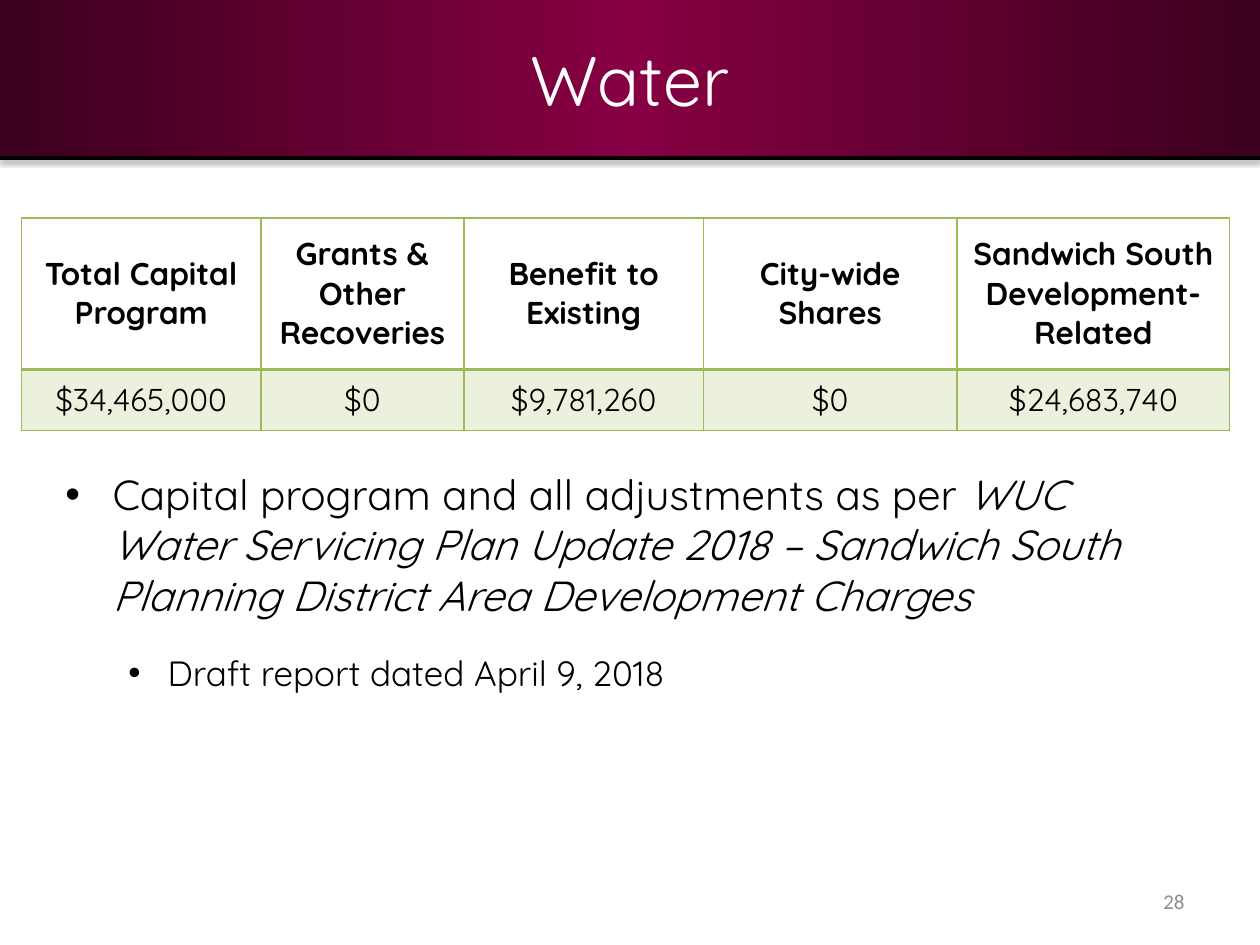
from copy import deepcopy

from lxml.etree import SubElement
from pptx import Presentation
from pptx.dml.color import RGBColor
from pptx.enum.shapes import MSO_CONNECTOR, MSO_SHAPE
from pptx.enum.text import MSO_ANCHOR, PP_ALIGN
from pptx.oxml.ns import qn
from pptx.util import Cm, Pt

PAGE_WIDTH, PAGE_HEIGHT, BAND_HEIGHT = Cm(25.4), Cm(19.05), Cm(3.18)
GREEN = "9BBB59"
BAND_STOPS = [(0, "3C001E"), (0.5, "860043"), (1, "3C001E")]
COLUMN_WIDTHS = [4.83, 4.09, 4.83, 5.11, 5.5]
ROW_HEIGHTS = [3.05, 1.24]
HEADINGS = ["Total Capital Program", "Grants & Other Recoveries", "Benefit to Existing",
            "City-wide Shares", "Sandwich South Development-Related"]
AMOUNTS = ["$34,465,000", "$0", "$9,781,260", "$0", "$24,683,740"]


def colour(value):
    return RGBColor.from_string(value)


def add_span(para, text, shade="000000", **formats):
    span = para.add_run()
    span.text = text
    span.font.color.rgb = colour(shade)
    for name, value in ({"name": "Quicksand"} | formats).items():
        setattr(span.font, name, value)


def add_band(page):
    band = page.shapes.add_shape(MSO_SHAPE.RECTANGLE, 0, 0, PAGE_WIDTH, BAND_HEIGHT)
    band.shadow.inherit = False
    band.line.fill.background()
    band.fill.gradient()
    band.fill.gradient_angle = 0
    stop_list = band._element.spPr.find(".//" + qn("a:gsLst"))
    stop_list.append(deepcopy(stop_list[-1]))
    for stop, (position, shade) in zip(band.fill.gradient_stops, BAND_STOPS):
        stop.position = position
        stop.color.rgb = colour(shade)
    page.shapes._spTree.insert(2, band._element)


def add_rule(page):
    """Draw the black line under the band, with its soft shadow."""
    rule = page.shapes.add_connector(MSO_CONNECTOR.STRAIGHT, 0, BAND_HEIGHT,
                                     PAGE_WIDTH, BAND_HEIGHT)
    rule.line.color.rgb = colour("000000")
    rule.line.width = Pt(2)
    effects = SubElement(rule._element.spPr, qn("a:effectLst"))
    shadow = SubElement(effects, qn("a:outerShdw"), blurRad=str(Pt(3.1)),
                        dist=str(Pt(1.6)), dir="5400000", rotWithShape="0")
    shade = SubElement(shadow, qn("a:srgbClr"), val="000000")
    SubElement(shade, qn("a:alpha"), val="38000")


def set_title(page, text):
    title = page.shapes.title
    place = {"left": 0, "top": 0, "width": PAGE_WIDTH, "height": BAND_HEIGHT}
    for name, value in place.items():
        setattr(title, name, value)
    title.text_frame.vertical_anchor = MSO_ANCHOR.MIDDLE
    para = title.text_frame.paragraphs[0]
    para.alignment = PP_ALIGN.CENTER
    add_span(para, text, "FFFFFF", size=Pt(40))


def set_borders(cell, bottom_width):
    properties = cell._tc.get_or_add_tcPr()
    for side, width in {"L": 1, "R": 1, "T": 1, "B": bottom_width}.items():
        border = SubElement(properties, qn("a:ln" + side), w=str(Pt(width)))
        fill = SubElement(border, qn("a:solidFill"))
        SubElement(fill, qn("a:srgbClr"), val=GREEN)


def fill_cell(cell, text, is_heading):
    cell.vertical_anchor = MSO_ANCHOR.MIDDLE
    set_borders(cell, 2 if is_heading else 1)
    if is_heading:
        cell.fill.background()
    else:
        cell.fill.solid()
        cell.fill.fore_color.rgb = colour(GREEN)
        shade = cell._tc.tcPr.find(qn("a:solidFill") + "/" + qn("a:srgbClr"))
        SubElement(shade, qn("a:alpha"), val="20000")
        for side in ("left", "right", "top", "bottom"):
            setattr(cell, "margin_" + side, 0)
    para = cell.text_frame.paragraphs[0]
    para.alignment = PP_ALIGN.CENTER
    add_span(para, text, size=Pt(18), bold=is_heading)


def add_cost_table(page):
    rows = [HEADINGS, AMOUNTS]
    table = page.shapes.add_table(len(rows), len(HEADINGS), Cm(0.43), Cm(4.39),
                                  Cm(sum(COLUMN_WIDTHS)), Cm(sum(ROW_HEIGHTS))).table
    table.first_row = table.horz_banding = False
    for column, width in zip(table.columns, COLUMN_WIDTHS):
        column.width = Cm(width)
    for row_index, (height, texts) in enumerate(zip(ROW_HEIGHTS, rows)):
        table.rows[row_index].height = Cm(height)
        for column_index, text in enumerate(texts):
            fill_cell(table.cell(row_index, column_index), text, row_index == 0)


def add_box(page, left, top, width, height):
    box = page.shapes.add_textbox(Cm(left), Cm(top), Cm(width), Cm(height))
    box.text_frame.word_wrap = True
    return box.text_frame


def set_bullet(para, level, margin, hanging):
    para.level = level
    para.space_after = Pt(12)
    properties = para._p.get_or_add_pPr()
    properties.set("marL", str(Cm(margin)))
    properties.set("indent", str(-Cm(hanging)))
    SubElement(properties, qn("a:buFont"), typeface="Arial")
    SubElement(properties, qn("a:buChar"), char="•")


def add_notes_list(page):
    frame = add_box(page, 1.07, 9.32, 23.06, 8.26)
    program = frame.paragraphs[0]
    set_bullet(program, 0, 0.95, 0.95)
    add_span(program, "Capital program and all adjustments as per ", size=Pt(24))
    add_span(program, "WUC Water Servicing Plan Update 2018 – Sandwich South "
             "Planning District Area Development Charges", size=Pt(24), italic=True)
    report = frame.add_paragraph()
    set_bullet(report, 1, 2.06, 0.79)
    report.space_before = Pt(6)
    add_span(report, "Draft report dated April 9, 2018", size=Pt(20))


def add_page_number(page, number):
    frame = add_box(page, 18.2, 17.65, 5.93, 1.02)
    frame.vertical_anchor = MSO_ANCHOR.MIDDLE
    para = frame.paragraphs[0]
    para.alignment = PP_ALIGN.RIGHT
    add_span(para, number, "8C8C8C", name="Calibri", size=Pt(12))


def main():
    deck = Presentation()
    deck.slide_width, deck.slide_height = PAGE_WIDTH, PAGE_HEIGHT
    page = deck.slides.add_slide(deck.slide_layouts[5])
    add_band(page)
    set_title(page, "Water")
    add_rule(page)
    add_page_number(page, "28")
    add_cost_table(page)
    add_notes_list(page)
    deck.save("out.pptx")


if __name__ == "__main__":
    main()
